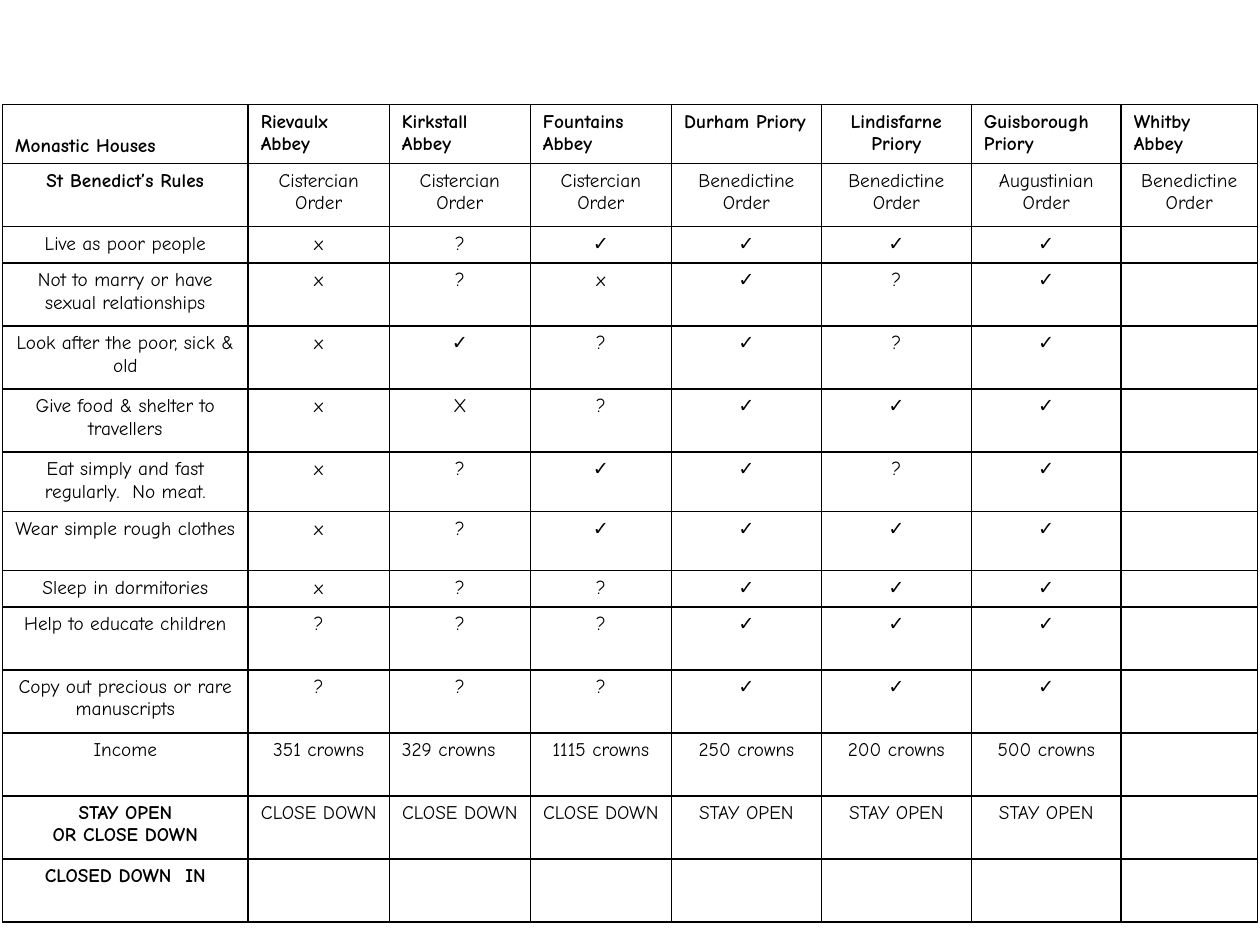
from dataclasses import dataclass

from lxml import etree
from pptx import Presentation
from pptx.dml.color import RGBColor
from pptx.enum.text import MSO_ANCHOR, PP_ALIGN
from pptx.oxml.ns import qn
from pptx.table import Table, _Cell
from pptx.util import Inches, Pt

LEFT, CENTER = PP_ALIGN.LEFT, PP_ALIGN.CENTER
TOP, BOTTOM = MSO_ANCHOR.TOP, MSO_ANCHOR.BOTTOM


@dataclass(frozen=True)
class Theme:
    font: str = "Comic Neue"
    size: Pt = Pt(11)
    ink: str = "000000"
    border: Pt = Pt(1)


@dataclass(frozen=True)
class House:
    name: str
    order: str
    marks: str
    income: str = ""
    verdict: str = ""
    width: float = 1.12
    name_align: PP_ALIGN = LEFT
    income_align: PP_ALIGN = CENTER


@dataclass(frozen=True)
class Row:
    label: str
    height: float = 0.5
    bold: bool = False


THEME = Theme()
LABEL_WIDTH = 1.95
HEADING = Row("Monastic Houses", 0.47, True)
ORDER = Row("St Benedict’s Rules", bold=True)
RULES = [
    Row("Live as poor people", 0.28),
    Row("Not to marry or have sexual relationships"),
    Row("Look after the poor, sick & old"),
    Row("Give food & shelter to travellers"),
    Row("Eat simply and fast regularly.  No meat.", 0.47),
    Row("Wear simple rough clothes", 0.47),
    Row("Sleep in dormitories", 0.28),
    Row("Help to educate children"),
    Row("Copy out precious or rare manuscripts"),
]
OUTCOMES = [
    Row("Income"),
    Row("STAY OPEN\nOR CLOSE DOWN", bold=True),
    Row("CLOSED DOWN  IN", bold=True),
]
ROWS = [HEADING, ORDER, *RULES, *OUTCOMES]

HOUSES = [
    House("Rievaulx Abbey", "Cistercian Order", "xxxxxxx??", "351 crowns", "CLOSE DOWN"),
    House("Kirkstall Abbey", "Cistercian Order", "??✓X?????", "329 crowns", "CLOSE DOWN",
          income_align=LEFT),
    House("Fountains Abbey", "Cistercian Order", "✓x??✓✓???", "1115 crowns", "CLOSE DOWN"),
    House("Durham Priory", "Benedictine Order", "✓✓✓✓✓✓✓✓✓", "250 crowns", "STAY OPEN", 1.19),
    House("Lindisfarne Priory", "Benedictine Order", "✓??✓?✓✓✓✓", "200 crowns", "STAY OPEN",
          1.19, CENTER),
    House("Guisborough Priory", "Augustinian Order", "✓✓✓✓✓✓✓✓✓", "500 crowns", "STAY OPEN",
          1.19),
    House("Whitby Abbey", "Benedictine Order", "", width=1.08),
]


def add_borders(cell: _Cell) -> None:
    properties = cell._tc.get_or_add_tcPr()
    for side in ("a:lnL", "a:lnR", "a:lnT", "a:lnB"):
        line = etree.SubElement(properties, qn(side), w=str(THEME.border))
        fill = etree.SubElement(line, qn("a:solidFill"))
        etree.SubElement(fill, qn("a:srgbClr"), val=THEME.ink)


def write_cell(cell: _Cell, text: str, bold: bool = False,
               align: PP_ALIGN = CENTER, anchor: MSO_ANCHOR = TOP) -> None:
    add_borders(cell)
    cell.fill.background()
    cell.vertical_anchor = anchor
    cell.text_frame.text = text
    for paragraph in cell.text_frame.paragraphs:
        paragraph.alignment = align
        for run in paragraph.runs:
            run.font.name = THEME.font
            run.font.size = THEME.size
            run.font.bold = bold
            run.font.color.rgb = RGBColor.from_string(THEME.ink)
        if not paragraph.runs:
            etree.SubElement(paragraph._p, qn("a:endParaRPr"), sz=str(THEME.size.centipoints))


def write_labels(table: Table) -> None:
    table.columns[0].width = Inches(LABEL_WIDTH)
    for index, row in enumerate(ROWS):
        table.rows[index].height = Inches(row.height)
        is_heading = row is HEADING
        write_cell(table.cell(index, 0), row.label, row.bold,
                   LEFT if is_heading else CENTER, BOTTOM if is_heading else TOP)


def write_house(table: Table, column: int, house: House) -> None:
    table.columns[column].width = Inches(house.width)
    write_cell(table.cell(0, column), house.name, True, house.name_align)
    marks = house.marks or [""] * len(RULES)
    entries = [house.order, *marks, house.income, house.verdict, ""]
    for index, entry in enumerate(entries, start=1):
        align = house.income_align if entry == house.income else CENTER
        write_cell(table.cell(index, column), entry, align=align)


def main() -> None:
    presentation = Presentation()
    presentation.slide_width = Inches(10)
    presentation.slide_height = Inches(7.5)
    slide = presentation.slides.add_slide(presentation.slide_layouts[6])
    width = LABEL_WIDTH + sum(house.width for house in HOUSES)
    height = sum(row.height for row in ROWS)
    table = slide.shapes.add_table(
        len(ROWS), len(HOUSES) + 1,
        Inches(0.02), Inches(0.83), Inches(width), Inches(height),
    ).table
    table.first_row = False
    table.horz_banding = False
    write_labels(table)
    for column, house in enumerate(HOUSES, start=1):
        write_house(table, column, house)
    presentation.save("out.pptx")


if __name__ == "__main__":
    main()
